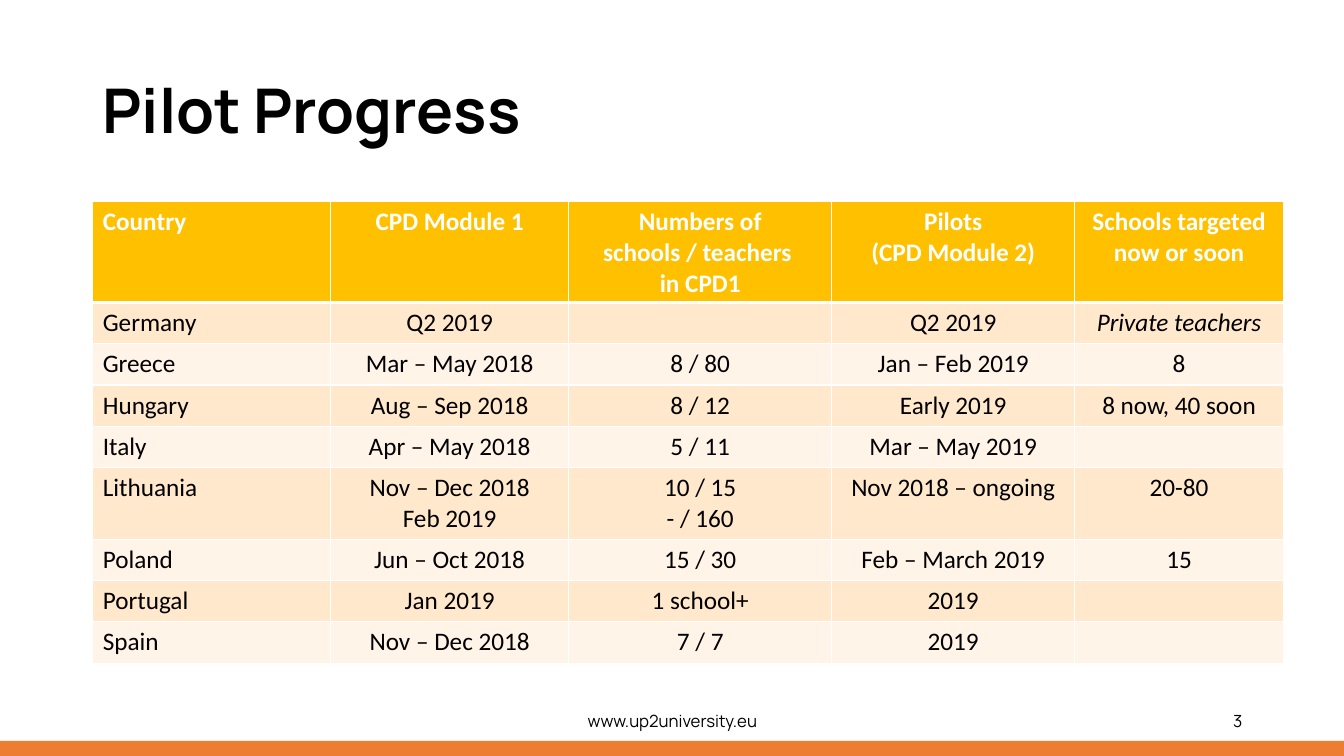
from lxml.etree import SubElement
from pptx import Presentation
from pptx.dml.color import RGBColor
from pptx.enum.shapes import MSO_SHAPE
from pptx.enum.text import MSO_ANCHOR, PP_ALIGN
from pptx.oxml.ns import qn
from pptx.util import Inches, Pt

COLORS = {
    "text": "000000",
    "white": "FFFFFF",
    "header": "FFC000",
    "band_dark": "FFE8CC",
    "band_light": "FFF4E7",
    "footer_bar": "ED7D31",
}
HEADING_FONT = "Manrope"
TABLE_FONT = "Calibri"

COLUMN_WIDTHS = [2.36, 2.36, 2.61, 2.41, 2.07]
HEADER_HEIGHT = 1
LINE_HEIGHT = 0.3
ROW_PADDING = 0.11

HEADER = ["Country", "CPD Module 1", "Numbers of\vschools / teachers \vin CPD1",
          "Pilots\v(CPD Module 2)", "Schools targeted now or soon"]
PILOTS = [
    ["Germany", "Q2 2019", "", "Q2 2019", "Private teachers"],
    ["Greece", "Mar – May 2018", "8 / 80", "Jan – Feb 2019", "8"],
    ["Hungary", "Aug – Sep 2018", "8 / 12", "Early 2019", "8 now, 40 soon"],
    ["Italy", "Apr – May 2018", "5 / 11", "Mar – May 2019", ""],
    ["Lithuania", "Nov – Dec 2018\nFeb 2019", "10 / 15\v- / 160", "Nov 2018 – ongoing", "20-80"],
    ["Poland", "Jun – Oct 2018", "15 / 30", "Feb – March 2019", "15"],
    ["Portugal", "Jan 2019", "1 school+", "2019", ""],
    ["Spain", "Nov – Dec 2018", "7 / 7", "2019", ""],
]
ITALIC_TEXTS = {"Private teachers"}


class SlideBuilder:
    def __init__(self, slide):
        self.slide = slide

    def color(self, name):
        return RGBColor.from_string(COLORS[name])

    def add_runs(self, text_frame, text, size, font, color="text", bold=False,
                 align=PP_ALIGN.LEFT, spacing=None):
        for index, block in enumerate(text.split("\n")):
            paragraph = text_frame.add_paragraph() if index else text_frame.paragraphs[0]
            paragraph.alignment = align
            if spacing:
                paragraph.line_spacing = spacing
            for line_index, line in enumerate(block.split("\v")):
                if line_index:
                    paragraph.add_line_break()
                if not line:
                    continue
                run = paragraph.add_run()
                run.text = line
                run.font.size = Pt(size)
                run.font.name = font
                run.font.bold = bold
                run.font.italic = text in ITALIC_TEXTS
                run.font.color.rgb = self.color(color)

    def bar(self, left, top, width, height, color):
        shape = self.slide.shapes.add_shape(
            MSO_SHAPE.RECTANGLE, Inches(left), Inches(top), Inches(width), Inches(height))
        shape.shadow.inherit = False
        shape.fill.solid()
        shape.fill.fore_color.rgb = self.color(color)
        shape.line.fill.background()

    def text(self, left, top, width, height, text, size, **style):
        box = self.slide.shapes.add_textbox(
            Inches(left), Inches(top), Inches(width), Inches(height))
        box.text_frame.word_wrap = True
        box.text_frame.vertical_anchor = MSO_ANCHOR.MIDDLE
        self.add_runs(box.text_frame, text, size, HEADING_FONT, **style)

    def borders(self, cell, bottom_width):
        properties = cell._tc.get_or_add_tcPr()
        sides = [("a:lnL", 1), ("a:lnR", 1), ("a:lnT", 1), ("a:lnB", bottom_width)]
        for side, width in sides:
            line = SubElement(properties, qn(side), w=str(Pt(width)))
            fill = SubElement(line, qn("a:solidFill"))
            SubElement(fill, qn("a:srgbClr"), val=COLORS["white"])

    def table(self, left, top, rows, widths, heights):
        frame = self.slide.shapes.add_table(
            len(rows), len(widths), Inches(left), Inches(top),
            Inches(sum(widths)), Inches(sum(heights)))
        table = frame.table
        table.horz_banding = False
        for column, width in zip(table.columns, widths):
            column.width = Inches(width)
        for row_index, (texts, height) in enumerate(zip(rows, heights)):
            table.rows[row_index].height = Inches(height)
            is_header = row_index == 0
            band = "band_dark" if row_index % 2 else "band_light"
            for column_index, text in enumerate(texts):
                cell = table.cell(row_index, column_index)
                self.borders(cell, 3 if is_header else 1)
                cell.fill.solid()
                cell.fill.fore_color.rgb = self.color("header" if is_header else band)
                self.add_runs(cell.text_frame, text, 18, TABLE_FONT,
                              color="white" if is_header else "text", bold=is_header,
                              align=PP_ALIGN.CENTER if column_index else PP_ALIGN.LEFT)


def row_height(texts):
    lines = max(len(text.splitlines()) for text in texts)
    return lines * LINE_HEIGHT + ROW_PADDING


def main():
    presentation = Presentation()
    presentation.slide_width = Inches(13.33)
    presentation.slide_height = Inches(7.5)
    slide = presentation.slides.add_slide(presentation.slide_layouts[6])
    builder = SlideBuilder(slide)

    builder.bar(0, 7.35, 13.33, 0.15, "footer_bar")
    builder.text(0.92, 0.4, 10.08, 1.45, "Pilot Progress", 44, bold=True, spacing=0.9)
    heights = [HEADER_HEIGHT] + [row_height(texts) for texts in PILOTS]
    builder.table(0.92, 2, [HEADER] + PILOTS, COLUMN_WIDTHS, heights)
    builder.text(4.42, 6.95, 4.5, 0.4, "www.up2university.eu", 12, align=PP_ALIGN.CENTER)
    builder.text(9.42, 6.95, 3, 0.4, "3", 12, align=PP_ALIGN.RIGHT)

    presentation.save("out.pptx")


if __name__ == "__main__":
    main()
